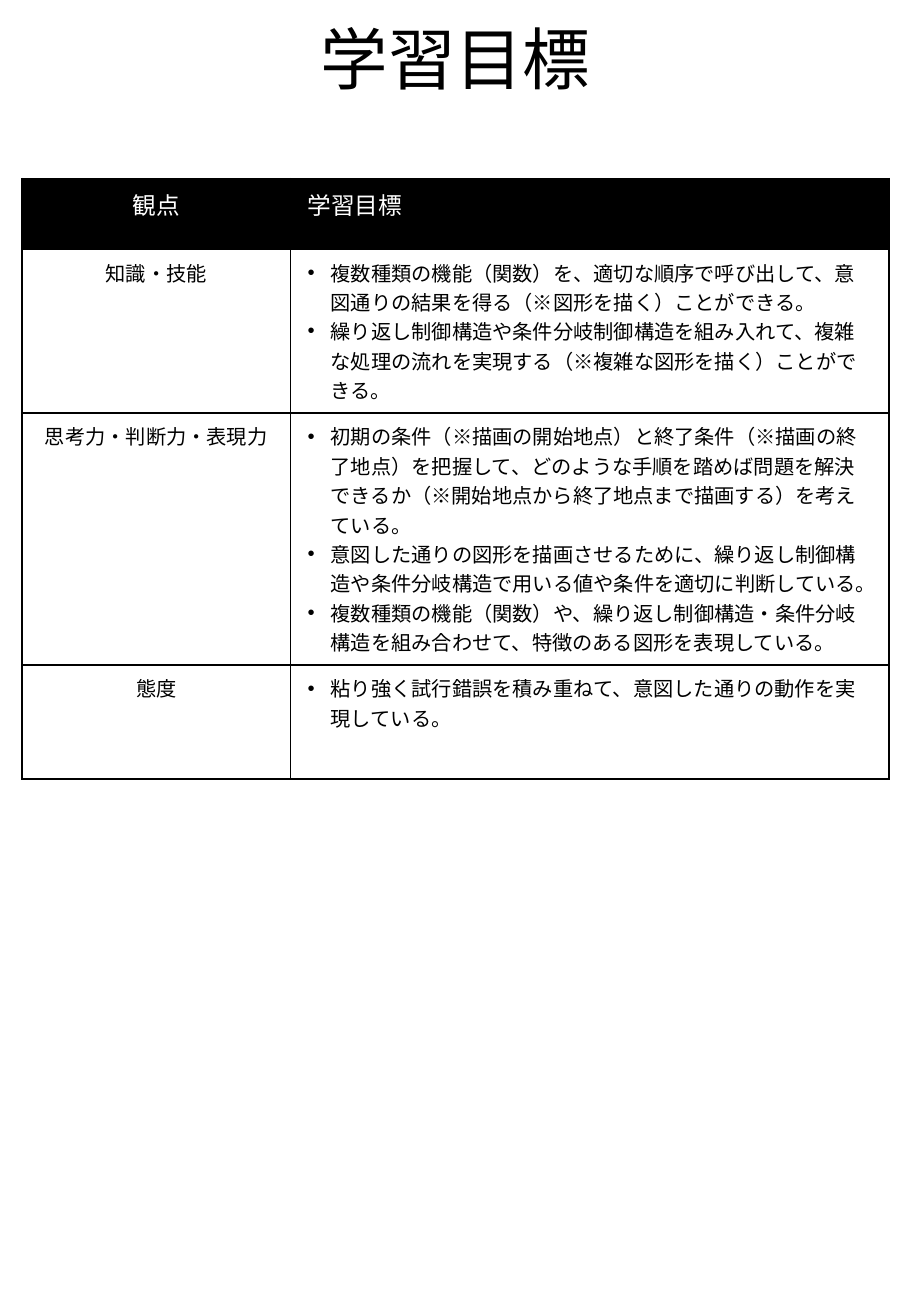
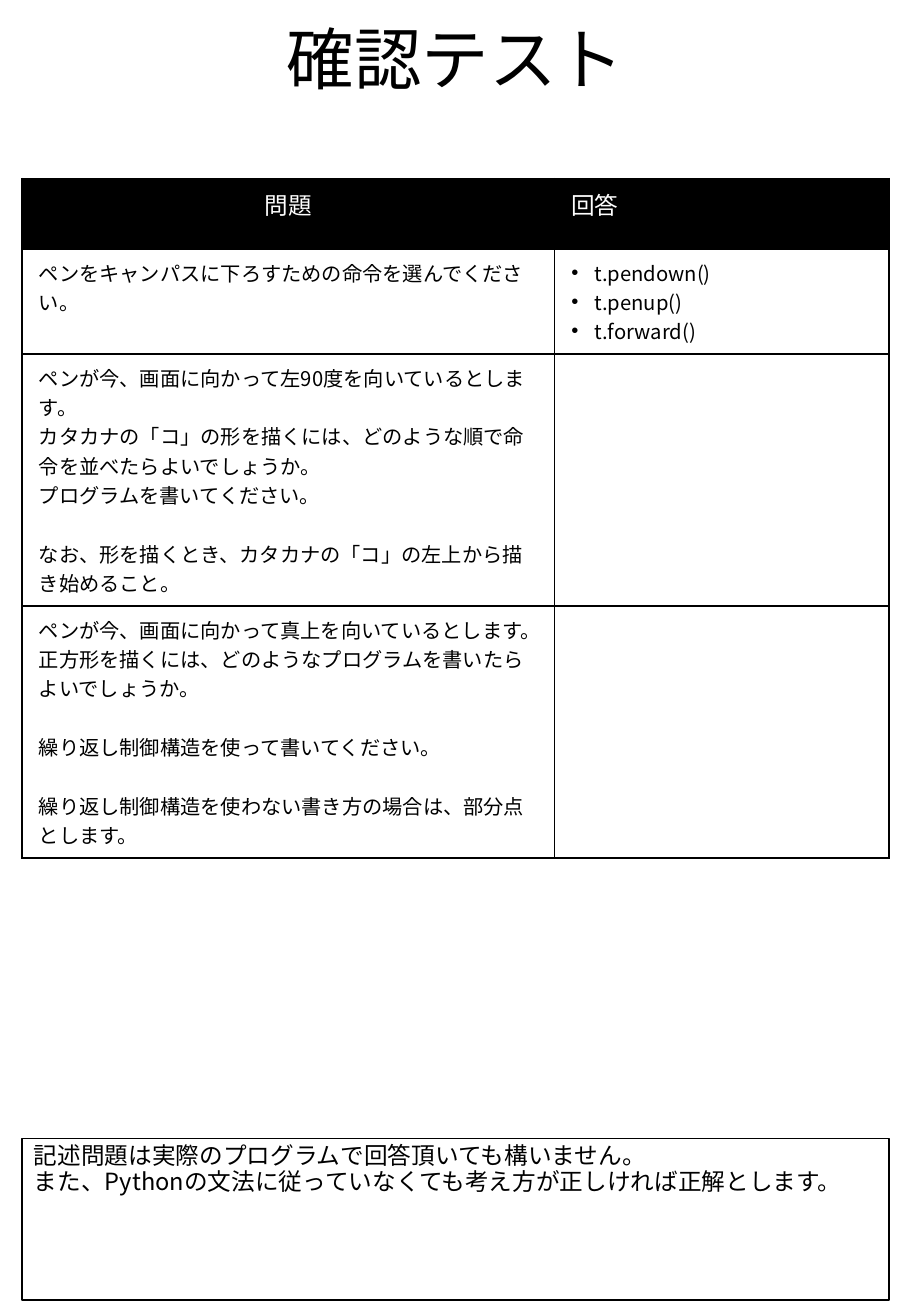
from dataclasses import dataclass

from lxml import etree
from pptx import Presentation
from pptx.dml.color import RGBColor
from pptx.enum.lang import MSO_LANGUAGE_ID
from pptx.enum.shapes import MSO_SHAPE
from pptx.enum.text import MSO_ANCHOR, MSO_AUTO_SIZE, PP_ALIGN
from pptx.oxml.ns import qn
from pptx.slide import Slide
from pptx.table import _Cell
from pptx.text.text import TextFrame
from pptx.util import Inches, Pt

RECTANGLE = MSO_SHAPE.RECTANGLE
TOP, BOTTOM = MSO_ANCHOR.TOP, MSO_ANCHOR.BOTTOM
LEFT, CENTER = PP_ALIGN.LEFT, PP_ALIGN.CENTER
NO_AUTOFIT = MSO_AUTO_SIZE.NONE
JAPANESE = MSO_LANGUAGE_ID.JAPANESE

# Shared style
COLORS = {"ink": "000000", "paper": "FFFFFF"}
FONT = "Noto Sans CJK JP"
TITLE_SIZE, LARGE_SIZE, BODY_SIZE = 40, 14, 12
TIGHT = 0.9
BLANK_LINE = 17.4
BULLET_INDENT = 0.19
TITLE_LAYOUT = 5

# Page geometry in inches
PAGE_WIDTH, PAGE_HEIGHT = 7.5, 10.83
MARGIN = 0.18
CONTENT_WIDTH = PAGE_WIDTH - 2 * MARGIN
TITLE_WIDTH = PAGE_WIDTH * 0.85
TITLE_TOP, TITLE_HEIGHT = 0.06, 0.81
TABLE_TOP = 1.47
NOTE_TOP, NOTE_HEIGHT = 9.37, 1.33


@dataclass(frozen=True)
class Line:
    text: str
    bullet: bool = False
    gap: bool = False


@dataclass(frozen=True)
class Page:
    title: str
    first_column_share: float
    row_heights: tuple[float, ...]
    headings: tuple[str, str]
    rows: tuple[tuple[list[Line], list[Line]], ...]
    first_column_align: PP_ALIGN = LEFT
    note: tuple[str, ...] = ()


def bullets(*texts: str) -> list[Line]:
    return [Line(text, bullet=True) for text in texts]


PAGES = (
    Page(
        "学習目標", 0.31, (0.58, 1.09, 0.77, 0.94), ("観点", "学習目標"),
        (
            ([Line("知識・技能")], bullets(
                "複数種類の機能（関数）を、適切な順序で呼び出して、意図通りの結果を得る（※図形を描く）ことができる。",
                "繰り返し制御構造や条件分岐制御構造を組み入れて、複雑な処理の流れを実現する（※複雑な図形を描く）ことができる。",
            )),
            ([Line("思考力・判断力・表現力")], bullets(
                "初期の条件（※描画の開始地点）と終了条件（※描画の終了地点）を把握して、どのような手順を踏めば問題を"
                "解決できるか（※開始地点から終了地点まで描画する）を考えている。",
                "意図した通りの図形を描画させるために、繰り返し制御構造や条件分岐構造で用いる値や条件を適切に判断している。",
                "複数種類の機能（関数）や、繰り返し制御構造・条件分岐構造を組み合わせて、特徴のある図形を表現している。",
            )),
            ([Line("態度")], bullets(
                "粘り強く試行錯誤を積み重ねて、意図した通りの動作を実現している。",
            )),
        ),
        first_column_align=CENTER,
    ),
    Page(
        "確認テスト", 0.614, (0.58, 0.77, 0.94, 0.94), ("問題", "回答"),
        (
            ([Line("ペンをキャンパスに下ろすための命令を選んでください。")],
             bullets("t.pendown()", "t.penup()", "t.forward()")),
            ([
                Line("ペンが今、画面に向かって左90度を向いているとします。"),
                Line("カタカナの「コ」の形を描くには、どのような順で命令を並べたらよいでしょうか。"),
                Line("プログラムを書いてください。"),
                Line("なお、形を描くとき、カタカナの「コ」の左上から描き始めること。", gap=True),
            ], []),
            ([
                Line("ペンが今、画面に向かって真上を向いているとします。"),
                Line("正方形を描くには、どのようなプログラムを書いたらよいでしょうか。"),
                Line("繰り返し制御構造を使って書いてください。", gap=True),
                Line("繰り返し制御構造を使わない書き方の場合は、部分点とします。", gap=True),
            ], []),
        ),
        note=(
            "記述問題は実際のプログラムで回答頂いても構いません。",
            "また、Pythonの文法に従っていなくても考え方が正しければ正解とします。",
        ),
    ),
)


def rgb(name: str) -> RGBColor:
    return RGBColor.from_string(COLORS[name])


def write(frame: TextFrame, lines: list[Line], *, size: float = BODY_SIZE,
          color: str = "ink", align: PP_ALIGN = LEFT, spacing: float = 1.0) -> None:
    """Fill a text frame with one paragraph per line."""
    for index, line in enumerate(lines):
        paragraph = frame.add_paragraph() if index else frame.paragraphs[0]
        paragraph.alignment = align
        paragraph.line_spacing = spacing
        paragraph.space_before = Pt(BLANK_LINE if line.gap else 0)
        run = paragraph.add_run()
        run.text = line.text
        font = run.font
        font.size, font.bold, font.name = Pt(size), False, FONT
        font.language_id = JAPANESE
        font.color.rgb = rgb(color)
        east_asian = etree.SubElement(run._r.get_or_add_rPr(), qn("a:ea"))
        east_asian.set("typeface", FONT)
        if line.bullet:
            properties = paragraph._p.get_or_add_pPr()
            properties.set("marL", str(Inches(BULLET_INDENT)))
            properties.set("indent", str(-Inches(BULLET_INDENT)))
            etree.SubElement(properties, qn("a:buFont")).set("typeface", "Arial")
            etree.SubElement(properties, qn("a:buChar")).set("char", "•")


def format_cell(cell: _Cell, fill: str) -> None:
    """Set the margins, fill and four borders of a cell."""
    cell.margin_left = cell.margin_right = Inches(0.14)
    cell.margin_top = cell.margin_bottom = Inches(0.07)
    cell.vertical_anchor = TOP
    cell.fill.solid()
    cell.fill.fore_color.rgb = rgb(fill)
    properties = cell._tc.get_or_add_tcPr()
    for index, side in enumerate(("lnL", "lnR", "lnT", "lnB")):
        border = etree.Element(qn(f"a:{side}"), w=str(Pt(1)))
        solid = etree.SubElement(border, qn("a:solidFill"))
        etree.SubElement(solid, qn("a:srgbClr")).set("val", COLORS["ink"])
        properties.insert(index, border)


def add_title(slide: Slide, text: str) -> None:
    title = slide.shapes.title
    title.left, title.top = Inches((PAGE_WIDTH - TITLE_WIDTH) / 2), Inches(TITLE_TOP)
    title.width, title.height = Inches(TITLE_WIDTH), Inches(TITLE_HEIGHT)
    title.text_frame.auto_size = NO_AUTOFIT
    title.text_frame.vertical_anchor = BOTTOM
    write(title.text_frame, [Line(text)], size=TITLE_SIZE, align=CENTER, spacing=TIGHT)


def add_page_table(slide: Slide, page: Page) -> None:
    table = slide.shapes.add_table(
        len(page.row_heights), len(page.headings), Inches(MARGIN), Inches(TABLE_TOP),
        Inches(CONTENT_WIDTH), Inches(sum(page.row_heights))).table
    table.horz_banding = False
    shares = (page.first_column_share, 1 - page.first_column_share)
    for column, share in zip(table.columns, shares):
        column.width = Inches(CONTENT_WIDTH * share)
    for row, height in zip(table.rows, page.row_heights):
        row.height = Inches(height)

    # Header row
    for column, (heading, align) in enumerate(zip(page.headings, (CENTER, LEFT))):
        cell = table.cell(0, column)
        format_cell(cell, "ink")
        write(cell.text_frame, [Line(heading)], size=LARGE_SIZE, color="paper", align=align)

    # Body rows
    for row_number, contents in enumerate(page.rows, start=1):
        for column, (lines, align) in enumerate(zip(contents, (page.first_column_align, LEFT))):
            cell = table.cell(row_number, column)
            format_cell(cell, "paper")
            write(cell.text_frame, lines, align=align)


def add_note(slide: Slide, texts: tuple[str, ...]) -> None:
    note = slide.shapes.add_shape(RECTANGLE, Inches(MARGIN), Inches(NOTE_TOP),
                                  Inches(CONTENT_WIDTH), Inches(NOTE_HEIGHT))
    note.shadow.inherit = False
    note.fill.solid()
    note.fill.fore_color.rgb = rgb("paper")
    note.line.color.rgb = rgb("ink")
    note.line.width = Pt(1)
    note.text_frame.word_wrap = True
    note.text_frame.vertical_anchor = TOP
    write(note.text_frame, [Line(text) for text in texts], size=LARGE_SIZE, spacing=TIGHT)


def main() -> None:
    presentation = Presentation()
    presentation.slide_width = Inches(PAGE_WIDTH)
    presentation.slide_height = Inches(PAGE_HEIGHT)
    for page in PAGES:
        slide = presentation.slides.add_slide(presentation.slide_layouts[TITLE_LAYOUT])
        add_title(slide, page.title)
        add_page_table(slide, page)
        if page.note:
            add_note(slide, page.note)
    presentation.save("out.pptx")


if __name__ == "__main__":
    main()
